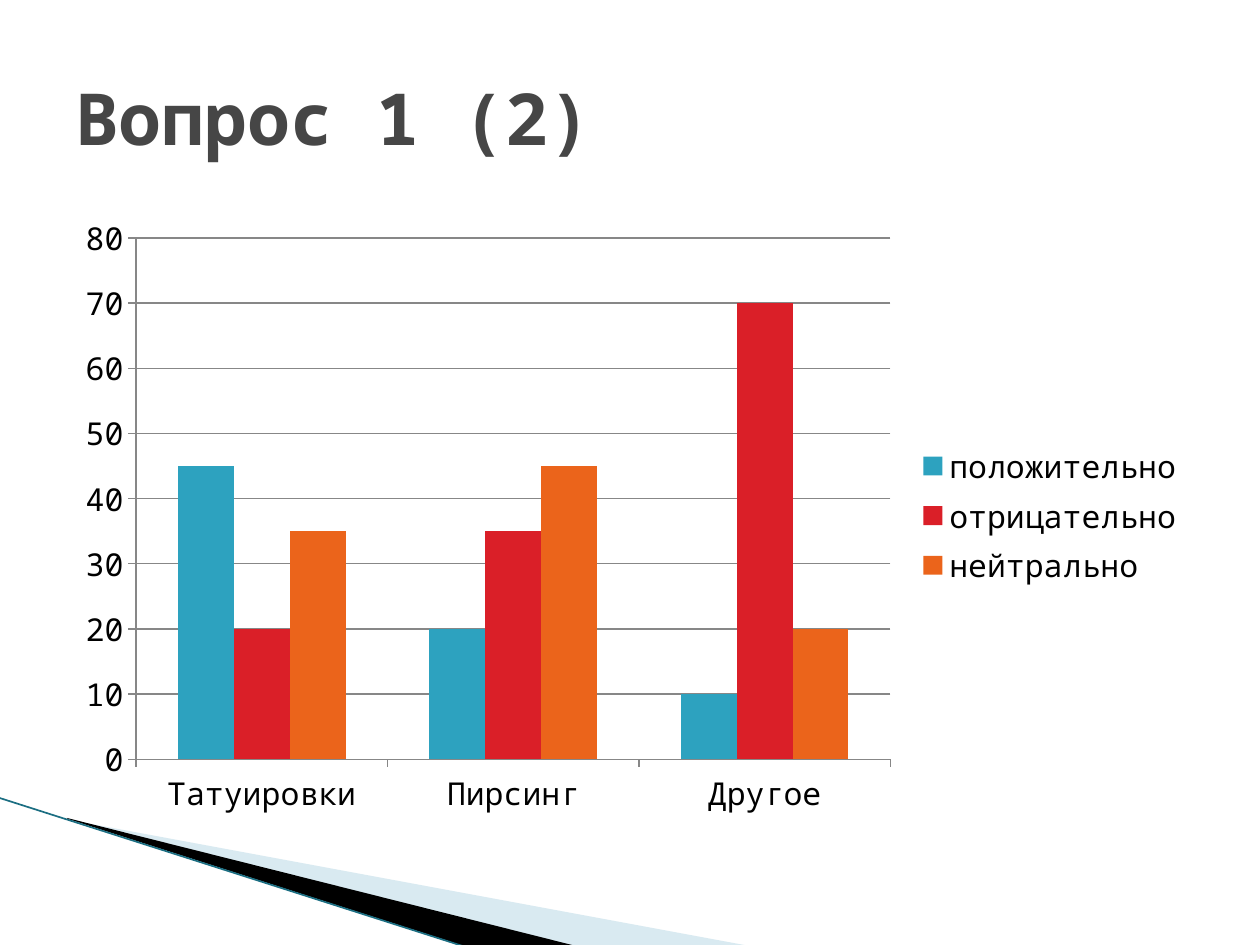
from lxml import etree
from pptx import Presentation
from pptx.chart.data import CategoryChartData
from pptx.dml.color import RGBColor
from pptx.enum.chart import XL_CHART_TYPE, XL_LEGEND_POSITION, XL_TICK_MARK
from pptx.enum.shapes import MSO_CONNECTOR
from pptx.enum.text import MSO_ANCHOR
from pptx.oxml.ns import qn
from pptx.util import Cm, Pt

COLUMNS = XL_CHART_TYPE.COLUMN_CLUSTERED
RIGHT = XL_LEGEND_POSITION.RIGHT
OUTSIDE = XL_TICK_MARK.OUTSIDE
STRAIGHT = MSO_CONNECTOR.STRAIGHT
MIDDLE = MSO_ANCHOR.MIDDLE

BLACK = RGBColor(0x00, 0x00, 0x00)
GREY = RGBColor(0x46, 0x46, 0x46)
AXIS = RGBColor(0x87, 0x87, 0x87)
PALE = RGBColor(0xA0, 0xCB, 0xDC)
DEEP_TEAL = RGBColor(0x1B, 0x6E, 0x82)
TEAL = RGBColor(0x2D, 0xA2, 0xBF)
RED = RGBColor(0xDA, 0x1F, 0x28)
ORANGE = RGBColor(0xEB, 0x64, 0x1B)

FONT = "Noto Sans Mono"
TITLE = {"name": FONT, "size": Pt(41), "bold": True}
LABELS = {"name": FONT, "size": Pt(18)}

CATEGORIES = ["Татуировки", "Пирсинг", "Другое"]
SERIES = [
    ("положительно", (45, 20, 10), TEAL),
    ("отрицательно", (20, 35, 70), RED),
    ("нейтрально", (35, 45, 20), ORANGE),
]


class SlideBuilder:
    """Holds the style and the current slide, and adds each kind of element."""

    def __init__(self, prs):
        self.s = prs.slides.add_slide(prs.slide_layouts[6])

    def format(self, font, values, color):
        for name, value in values.items():
            setattr(font, name, value)
        font.color.rgb = color

    def wedge(self, points, color, opacity=None):
        start, *rest = [(Cm(x), Cm(y)) for x, y in points]
        builder = self.s.shapes.build_freeform(*start)
        builder.add_line_segments(rest)
        sp = builder.convert_to_shape()
        sp.shadow.inherit = False
        sp.line.fill.background()
        sp.fill.solid()
        sp.fill.fore_color.rgb = color
        if opacity is not None:
            clr = sp.fill._xPr.find(".//" + qn("a:srgbClr"))
            etree.SubElement(clr, qn("a:alpha"), val=str(opacity * 1000))

    def line(self, x1, y1, x2, y2, color, width):
        sp = self.s.shapes.add_connector(STRAIGHT, Cm(x1), Cm(y1), Cm(x2), Cm(y2))
        sp.line.color.rgb = color
        sp.line.width = Pt(width)
        etree.SubElement(sp._element.spPr, qn("a:effectLst"))

    def title(self, text, x, y, w, h):
        sp = self.s.shapes.add_textbox(Cm(x), Cm(y), Cm(w), Cm(h))
        tf = sp.text_frame
        tf.word_wrap = True
        tf.vertical_anchor = MIDDLE
        r = tf.paragraphs[0].add_run()
        r.text = text
        self.format(r.font, TITLE, GREY)

    def column_chart(self, categories, series, x, y, w, h):
        data = CategoryChartData()
        data.categories = categories
        for name, values, _ in series:
            data.add_series(name, values)
        chart = self.s.shapes.add_chart(COLUMNS, Cm(x), Cm(y), Cm(w), Cm(h), data).chart
        self.format(chart.font, LABELS, BLACK)
        chart.has_title = False
        chart.has_legend = True
        chart.legend.position = RIGHT
        chart.legend.include_in_layout = False

        plot = chart.plots[0]
        plot.vary_by_categories = False
        plot.gap_width = 150
        for column, (_, _, color) in zip(plot.series, series):
            column.format.fill.solid()
            column.format.fill.fore_color.rgb = color

        for axis in (chart.category_axis, chart.value_axis):
            axis.major_tick_mark = OUTSIDE
            axis.format.line.color.rgb = AXIS
        value_axis = chart.value_axis
        value_axis.minimum_scale, value_axis.maximum_scale = 0, 80
        value_axis.major_unit = 10
        value_axis.has_major_gridlines = True
        value_axis.major_gridlines.format.line.color.rgb = AXIS


def main():
    prs = Presentation()
    prs.slide_width, prs.slide_height = Cm(25.4), Cm(19.05)
    b = SlideBuilder(prs)
    b.wedge([(1.4, 16.53), (15.11, 19.07), (11.58, 19.07), (1.4, 16.51)], PALE, 40)
    b.wedge([(1.35, 16.49), (11.61, 19.07), (9.45, 19.1), (1.37, 16.51)], BLACK)
    b.line(-0.03, 16.08, 9.42, 19.1, DEEP_TEAL, 0.95)
    b.title("Вопрос 1 (2)", 1.27, 0.76, 22.86, 3.18)
    b.column_chart(CATEGORIES, SERIES, 1.27, 4.11, 22.86, 12.57)
    prs.save("out.pptx")


if __name__ == "__main__":
    main()
